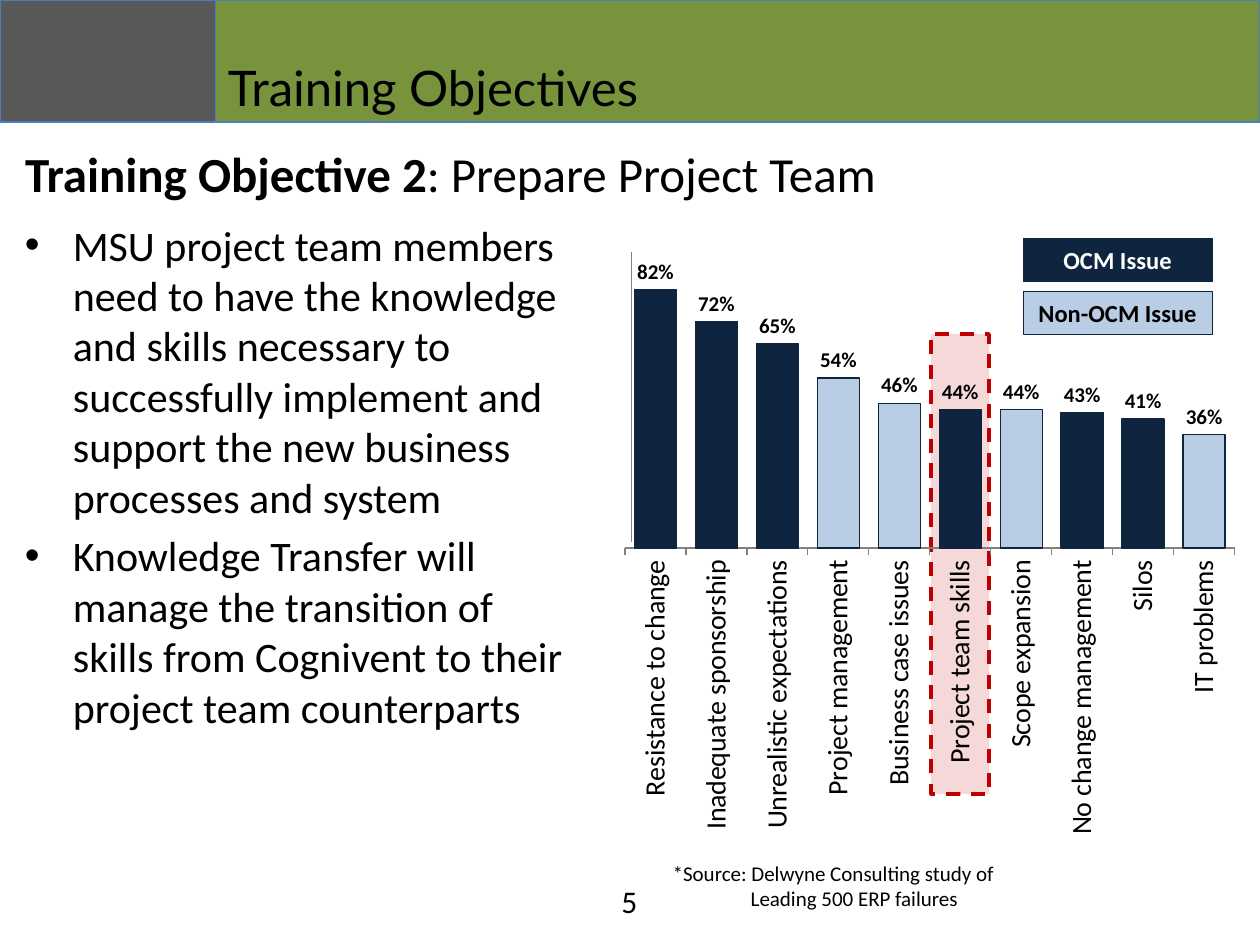
from lxml import etree
from pptx import Presentation
from pptx.chart.data import CategoryChartData
from pptx.dml.color import RGBColor
from pptx.enum import chart as ch, dml, shapes, text
from pptx.oxml import parse_xml
from pptx.oxml.ns import nsdecls, qn
from pptx.util import Inches, Pt

NAVY, PALE, RED, BLACK = "0F243E", "B9CDE5", "C00000", "000000"
ISSUES = [
    ("Resistance to change", 0.82, NAVY),
    ("Inadequate sponsorship", 0.72, NAVY),
    ("Unrealistic expectations", 0.65, NAVY),
    ("Project management", 0.54, PALE),
    ("Business case issues", 0.46, PALE),
    ("Project team skills", 0.44, NAVY),
    ("Scope expansion", 0.44, PALE),
    ("No change management", 0.43, NAVY),
    ("Silos", 0.41, NAVY),
    ("IT problems", 0.36, PALE),
]
POINTS = [
    "MSU project team members need to have the knowledge and skills necessary "
    "to successfully implement and support the new business processes and system",
    "Knowledge Transfer will manage the transition of skills from Cognivent "
    "to their project team counterparts",
]


def color(code):
    return RGBColor.from_string(code)


def style(font, size, code=BLACK, bold=False, name="Calibri"):
    font.name, font.size, font.bold = name, Pt(size), bold
    font.color.rgb = color(code)


def paint(form, fill, line, width):
    form.fill.solid()
    form.fill.fore_color.rgb = color(fill)
    form.line.color.rgb = color(line)
    form.line.width = Pt(width)


def block(slide, x, y, w, h, fill, line, width):
    rect = slide.shapes.add_shape(
        shapes.MSO_SHAPE.RECTANGLE, Inches(x), Inches(y), Inches(w), Inches(h))
    rect.shadow.inherit = False
    paint(rect, fill, line, width)
    return rect


def write(slide, x, y, w, h, words, size, name="Calibri"):
    box = slide.shapes.add_textbox(Inches(x), Inches(y), Inches(w), Inches(h))
    frame = box.text_frame
    frame.word_wrap = True
    frame.text = words
    for para in frame.paragraphs:
        for run in para.runs:
            style(run.font, size, name=name)
    return frame


def indent(para, left, hang):
    props = para._p.get_or_add_pPr()
    props.set("marL", str(Inches(left)))
    props.set("indent", str(-Inches(hang)))
    return props


def header(slide, x, y, w, h):
    side = 1.71
    block(slide, x, y, side, h, "595959", "4B7EBC", 0.75)
    block(slide, x + side, y, w - side, h, "77933C", "4B7EBC", 0.75)
    frame = write(slide, x + side, y, 5.21, h, "Training Objectives", 28, "Lato")
    frame.vertical_anchor = text.MSO_ANCHOR.BOTTOM


def topic(slide, x, y, w, h):
    para = write(slide, x, y, w, h, "Training Objective 2", 28).paragraphs[0]
    para.runs[0].font.bold = True
    rest = para.add_run()
    rest.text = ": Prepare Project Team"
    style(rest.font, 28)


def bullets(slide, x, y, w, h):
    frame = write(slide, x, y, w, h, "\n".join(POINTS), 24)
    for index, para in enumerate(frame.paragraphs):
        if index:
            para.space_before = Pt(4.8)
        props = indent(para, 0.38, 0.38)
        etree.SubElement(props, qn("a:buFont")).set("typeface", "Arial")
        etree.SubElement(props, qn("a:buChar")).set("char", "•")


def marker(slide, x, y, w, h):
    rect = block(slide, x, y, w, h, RED, RED, 2)
    rect.line.dash_style = dml.MSO_LINE.DASH
    shade = rect._element.spPr.find(qn("a:solidFill"))[0]
    etree.SubElement(shade, qn("a:alpha")).set("val", "15000")


def place(chart, x, y, w, h):
    plot = chart._chartSpace.chart.plotArea
    for old in plot.findall(qn("c:layout")):
        plot.remove(old)
    spots = "".join(f'<c:{tag} val="{val}"/>' for tag, val in (
        ("layoutTarget", "inner"), ("xMode", "edge"), ("yMode", "edge"),
        ("x", x), ("y", y), ("w", w), ("h", h)))
    plot.insert(0, parse_xml(
        f'<c:layout {nsdecls("c")}><c:manualLayout>{spots}'
        '</c:manualLayout></c:layout>'))


def bars(slide, x, y, w, h):
    data = CategoryChartData(number_format="0%")
    data.categories = [name for name, _, _ in ISSUES]
    data.add_series("Series 1", [share for _, share, _ in ISSUES])
    chart = slide.shapes.add_chart(
        ch.XL_CHART_TYPE.COLUMN_CLUSTERED,
        Inches(x), Inches(y), Inches(w), Inches(h), data).chart
    chart.has_legend = chart.has_title = False
    style(chart.font, 10)
    place(chart, 0.02, 0.02, 0.96, 0.5)

    scale = chart.value_axis
    scale.minimum_scale, scale.maximum_scale, scale.major_unit = 0, 1, 0.2
    scale.has_major_gridlines = False
    scale.visible = False
    scale.tick_labels.number_format = "0%"
    scale.tick_labels.number_format_is_linked = False

    base = chart.category_axis
    base.has_major_gridlines = False
    base.major_tick_mark = ch.XL_TICK_MARK.OUTSIDE
    base.format.line.color.rgb = color("808080")
    base.format.line.width = Pt(0.75)
    style(base.tick_labels.font, 16)
    turn = base._element.find(qn("c:txPr")).find(qn("a:bodyPr"))
    turn.set("rot", "-5400000")
    turn.set("vert", "horz")

    plot = chart.plots[0]
    plot.gap_width = 45
    plot.vary_by_categories = False
    series = plot.series[0]
    paint(series.format, "4F81BD", NAVY, 0.75)
    for index, (_, _, fill) in enumerate(ISSUES):
        paint(series.points[index].format, fill, NAVY, 0.75)
    labels = series.data_labels
    labels.show_value = True
    labels.number_format = "0%"
    labels.number_format_is_linked = False
    labels.position = ch.XL_LABEL_POSITION.OUTSIDE_END
    style(labels.font, 12, bold=True)

    line = slide.shapes.add_connector(
        shapes.MSO_CONNECTOR.STRAIGHT, Inches(x + 0.15), Inches(y + 0.25),
        Inches(x + 0.15), Inches(y + 2.55))
    line.line.color.rgb = color("808080")
    line.line.width = Pt(0.25)
    etree.SubElement(line._element.spPr, qn("a:effectLst"))


def legend(slide, x, y, w, h):
    keys = [("OCM Issue", NAVY, "FFFFFF"), ("Non-OCM Issue", PALE, BLACK)]
    for index, (words, fill, ink) in enumerate(keys):
        key = block(slide, x, y + 0.42 * index, w, h, fill, NAVY, 0.25)
        frame = key.text_frame
        frame.text = words
        frame.word_wrap = False
        frame.vertical_anchor = text.MSO_ANCHOR.MIDDLE
        frame.paragraphs[0].alignment = text.PP_ALIGN.CENTER
        style(frame.paragraphs[0].runs[0].font, 14, ink, True)


def footer(slide, x, y, w, h):
    page = write(slide, x, y + 0.17, 2.33, 0.4, "5", 18)
    page.paragraphs[0].alignment = text.PP_ALIGN.CENTER
    note = write(slide, x + 1.4, y, w - 1.4, h,
                 "*Source: Delwyne Consulting study of Leading 500 ERP failures", 12)
    indent(note.paragraphs[0], 0.63, 0.62)


def main():
    deck = Presentation()
    deck.slide_width, deck.slide_height = Inches(10), Inches(7.5)
    slide = deck.slides.add_slide(deck.slide_layouts[6])
    header(slide, 0, 0, 10, 0.97)
    marker(slide, 7.39, 2.65, 0.46, 3.65)
    topic(slide, 0.1, 1.09, 9.79, 0.61)
    bullets(slide, 0.1, 1.69, 4.6, 5.03)
    bars(slide, 4.86, 1.75, 5.04, 5)
    legend(slide, 8.12, 1.89, 1.5, 0.34)
    footer(slide, 3.83, 6.78, 4.29, 0.5)
    deck.save("out.pptx")


if __name__ == "__main__":
    main()
